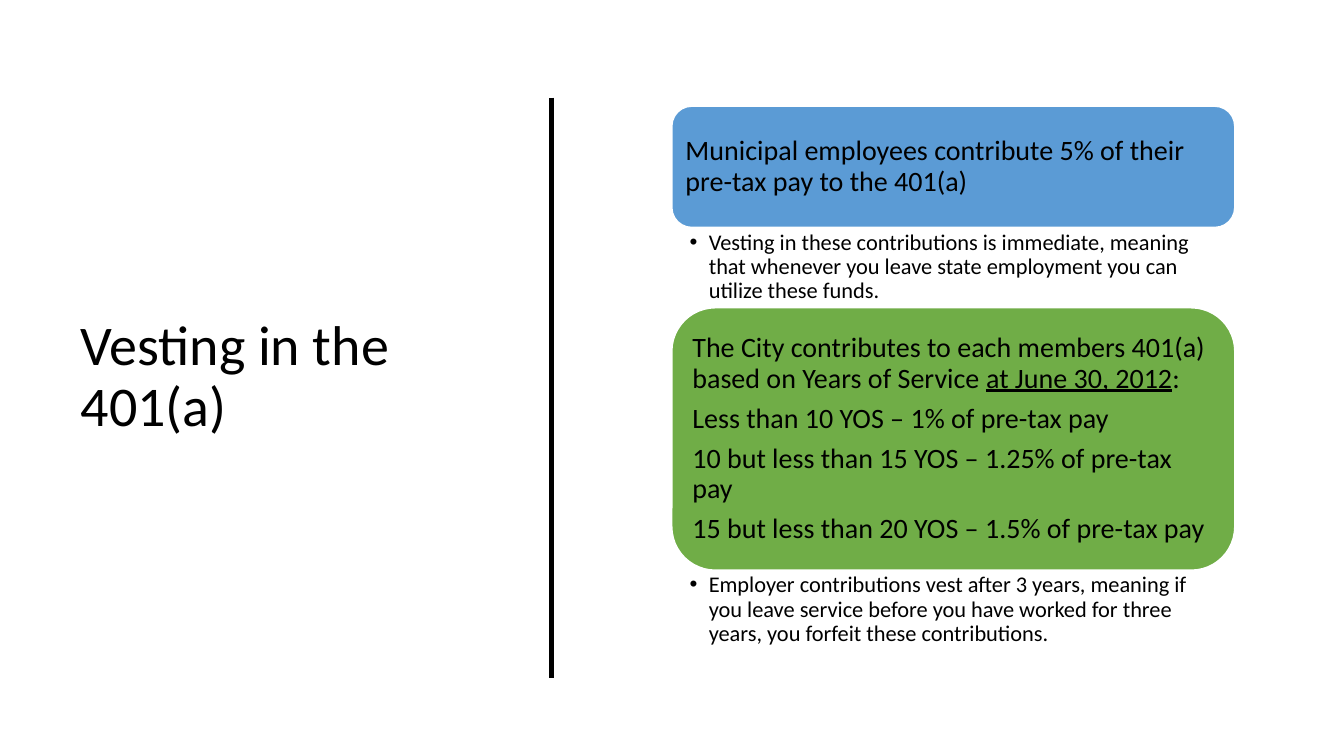
from lxml import etree
from pptx import Presentation
from pptx import util as u
from pptx.dml.color import RGBColor
from pptx.enum import shapes, text
from pptx.oxml import ns

PX = 9144
FONT = "Calibri"
BLACK = RGBColor(0x00, 0x00, 0x00)
WHITE = RGBColor(0xFF, 0xFF, 0xFF)
BLUE = RGBColor(0x5B, 0x9B, 0xD5)
GREEN = RGBColor(0x70, 0xAD, 0x47)

LEFT, WIDTH, NOTE_HEIGHT = 666, 559, 79
SECTIONS = [
    (105, 121, BLUE,
     [["Municipal employees contribute 5% of their pre-tax pay to the 401(a)"]],
     "Vesting in these contributions is immediate, meaning that whenever "
     "you leave state employment you can utilize these funds."),
    (305, 261, GREEN,
     [["The City contributes to each members 401(a) based on Years of Service ",
       ("at June 30, 2012", True), ":"],
      ["Less than 10 YOS – 1% of pre-tax pay"],
      ["10 but less than 15 YOS – 1.25% of pre-tax pay"],
      ["15 but less than 20 YOS – 1.5% of pre-tax pay"]],
     "Employer contributions vest after 3 years, meaning if you leave service "
     "before you have worked for three years, you forfeit these contributions."),
]


def px(n):
    return u.Emu(n * PX)


def box(*lengths):
    return [px(n) for n in lengths]


def add_bullet(p, indent):
    pPr = p._p.get_or_add_pPr()
    pPr.set("marL", str(px(indent)))
    pPr.set("indent", str(px(-indent)))
    etree.SubElement(pPr, ns.qn("a:buFont"), typeface="Arial")
    etree.SubElement(pPr, ns.qn("a:buChar"), char="•")


def write_text(tf, paragraphs, size=20, after=0, anchor=text.MSO_ANCHOR.MIDDLE,
               insets=(10, 5, 10, 5), bullet_indent=0):
    tf.word_wrap = True
    tf.auto_size = text.MSO_AUTO_SIZE.NONE
    tf.vertical_anchor = anchor
    tf.margin_left, tf.margin_top, tf.margin_right, tf.margin_bottom = box(*insets)
    for i, runs in enumerate(paragraphs):
        p = tf.add_paragraph() if i else tf.paragraphs[0]
        p.alignment = text.PP_ALIGN.LEFT
        p.line_spacing = 0.9
        p.space_before = u.Pt(0)
        p.space_after = u.Pt(after)
        if bullet_indent:
            p.level = 1
            add_bullet(p, bullet_indent)
        for item in runs:
            words, underline = (item, False) if isinstance(item, str) else item
            r = p.add_run()
            r.text = words
            r.font.name = FONT
            r.font.size = u.Pt(size)
            r.font.color.rgb = BLACK
            if underline:
                r.font.underline = True


def add_title(s, words):
    sp = s.shapes.title
    sp.left, sp.top, sp.width, sp.height = box(70, 221, 400, 308)
    write_text(sp.text_frame, [[words]], size=40)


def add_card(s, top, height, color, paragraphs):
    sp = s.shapes.add_shape(shapes.MSO_SHAPE.ROUNDED_RECTANGLE,
                            *box(LEFT, top, WIDTH, height))
    sp.shadow.inherit = False
    sp.fill.solid()
    sp.fill.fore_color.rgb = color
    sp.line.color.rgb = WHITE
    sp.line.width = u.Pt(1.5)
    write_text(sp.text_frame, paragraphs, after=7, insets=(8, 8, 8, 8))


def add_note(s, top, words):
    sp = s.shapes.add_textbox(*box(LEFT, top, WIDTH, NOTE_HEIGHT))
    write_text(sp.text_frame, [[words]], size=16, after=3,
               anchor=text.MSO_ANCHOR.TOP, insets=(18, 3, 16, 3),
               bullet_indent=19)


def add_divider(s, x, top, bottom):
    line = s.shapes.add_connector(shapes.MSO_CONNECTOR.STRAIGHT,
                                  *box(x, top, x, bottom))
    line.line.color.rgb = BLACK
    line.line.width = u.Pt(3)
    etree.SubElement(line._element.spPr, ns.qn("a:effectLst"))


def main():
    prs = Presentation()
    prs.slide_width, prs.slide_height = box(1333, 750)
    s = prs.slides.add_slide(prs.slide_layouts[5])
    add_title(s, "Vesting in the 401(a)")
    for top, height, color, paragraphs, note in SECTIONS:
        add_card(s, top, height, color, paragraphs)
        add_note(s, top + height, note)
    add_divider(s, 547, 97, 673)
    prs.save("out.pptx")


if __name__ == "__main__":
    main()
